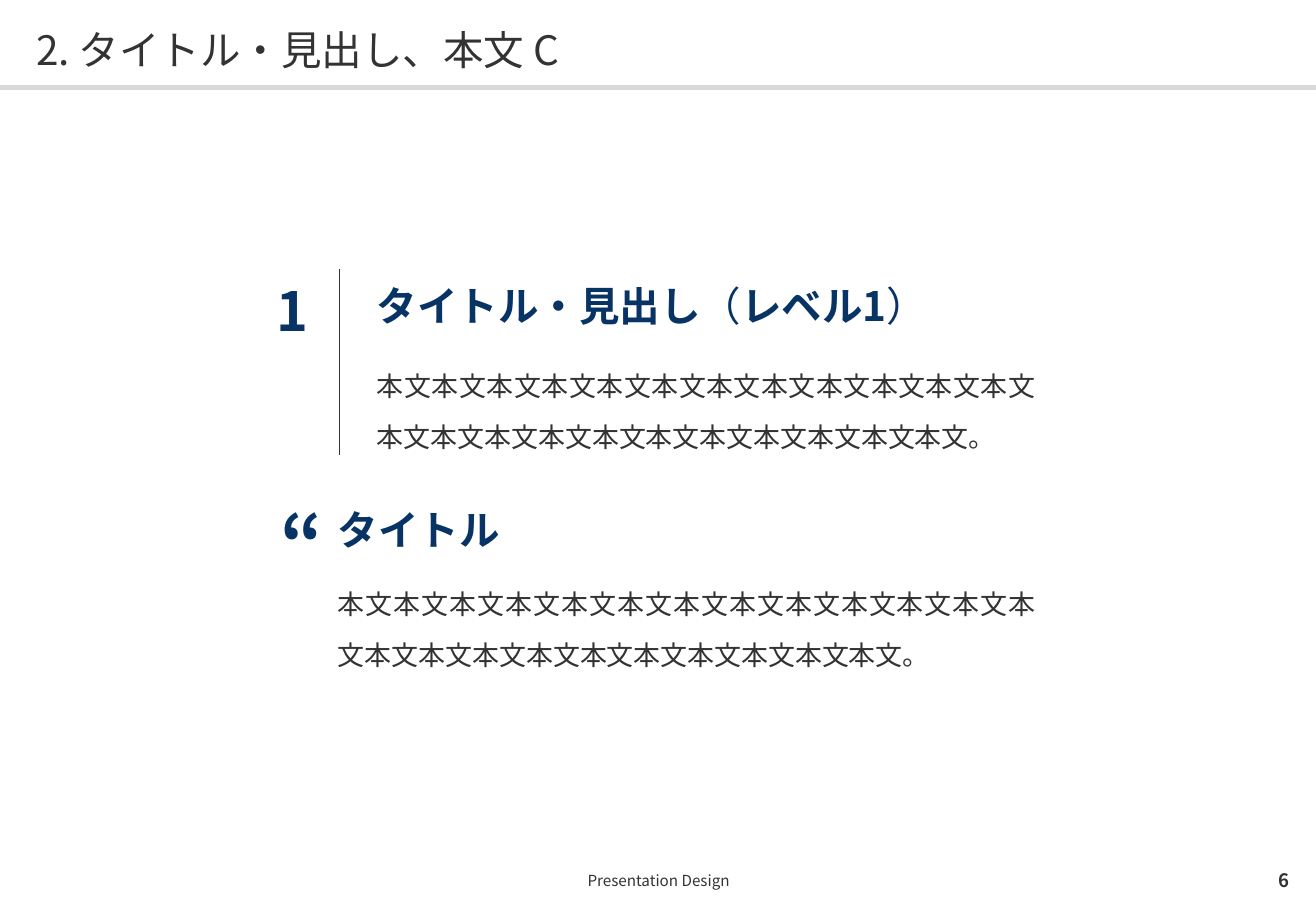
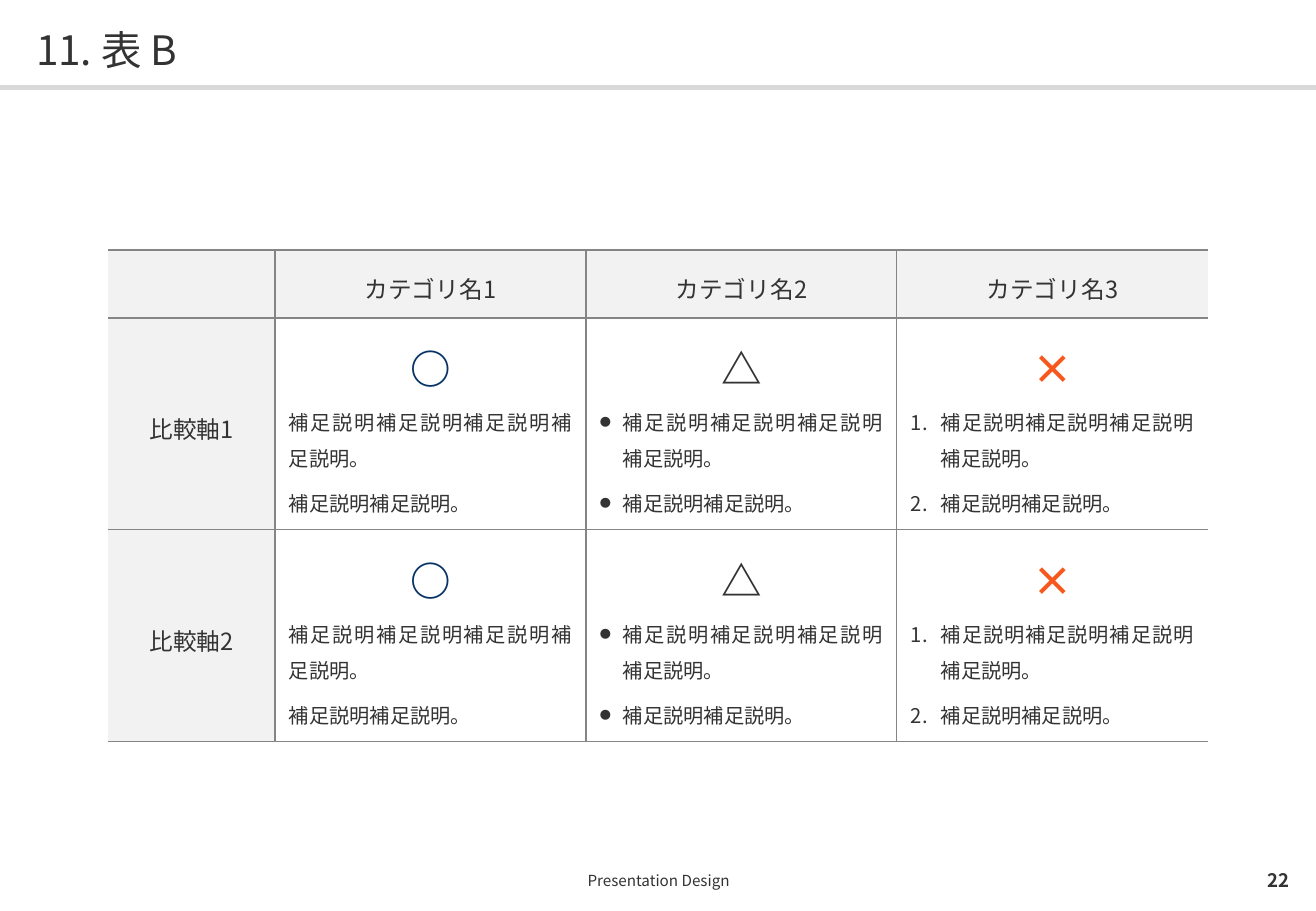
from dataclasses import dataclass

from lxml import etree
from pptx import Presentation
from pptx.dml.color import RGBColor
from pptx.enum.lang import MSO_LANGUAGE_ID
from pptx.enum.shapes import MSO_SHAPE
from pptx.enum.text import MSO_ANCHOR, MSO_AUTO_SIZE, PP_ALIGN
from pptx.oxml.ns import qn
from pptx.util import Emu, Pt

LEFT, CENTER, RIGHT = PP_ALIGN.LEFT, PP_ALIGN.CENTER, PP_ALIGN.RIGHT
JUSTIFY = PP_ALIGN.JUSTIFY
TOP, MIDDLE = MSO_ANCHOR.TOP, MSO_ANCHOR.MIDDLE
NO_FIT = MSO_AUTO_SIZE.NONE
RECTANGLE = MSO_SHAPE.RECTANGLE
JAPANESE = MSO_LANGUAGE_ID.JAPANESE
EMU_PER_PX = 7526
SLIDE_SIZE = (1316, 911)
TITLE_ONLY = 5
PLAIN_TABLE = "{2D5ABB26-0587-4C30-8999-92F81FD0307C}"


@dataclass(frozen=True)
class Theme:
    """Colours, font and type sizes of the deck."""

    font: str = "Noto Sans CJK JP"
    ink: str = "333333"
    navy: str = "073365"
    orange: str = "F7581D"
    band: str = "D9D9D9"
    grid: str = "858585"
    header: str = "F2F2F2"
    quote: int = 44
    numeral: int = 32
    title: int = 24
    body: int = 16
    label: int = 14
    note: int = 12
    page_number: int = 11
    footer: int = 9


THEME = Theme()


def px(length):
    """Turn a length in px into EMU."""
    return Emu(length * EMU_PER_PX)


def add_xml(parent, tag, **attributes):
    """Append a DrawingML element and return it."""
    return etree.SubElement(parent, qn(tag), attributes)


def write(frame, text, *, size, color=THEME.ink, bold=False, align=LEFT,
          line=None, before=0, after=0, bullet=None, join=False):
    """Write text as a new paragraph, or join it to the last one."""
    para = frame.paragraphs[-1]
    if not join:
        if para.runs:
            para = frame.add_paragraph()
        para.alignment = align
        para.space_before, para.space_after = Pt(before), Pt(after)
        if line:
            para.line_spacing = line
        if bullet:
            set_bullet(para, bullet)
    span = para.add_run()
    span.text = text
    font = span.font
    font.size, font.bold, font.name = Pt(size), bold, THEME.font
    font.color.rgb = RGBColor.from_string(color)
    font.language_id = JAPANESE
    add_xml(font.fill._xPr, "a:ea", typeface=THEME.font)


def set_bullet(para, bullet):
    """Give a paragraph a hanging dot or number."""
    indent = 23 if bullet == "●" else 30
    props = para._p.get_or_add_pPr()
    props.set("marL", str(px(indent)))
    props.set("indent", str(-px(indent)))
    if bullet == "●":
        add_xml(props, "a:buSzPct", val="55000")
        add_xml(props, "a:buFont", typeface=THEME.font)
        add_xml(props, "a:buChar", char=bullet)
    else:
        add_xml(props, "a:buFont", typeface=THEME.font)
        add_xml(props, "a:buAutoNum", type=bullet)


def place(shape, box):
    """Move a text shape to a box and clear its insets."""
    shape.left, shape.top, shape.width, shape.height = map(px, box)
    frame = shape.text_frame
    frame.margin_left = frame.margin_top = 0
    frame.margin_right = frame.margin_bottom = 0
    frame.word_wrap, frame.auto_size = True, NO_FIT
    frame.vertical_anchor = MIDDLE
    return frame


def add_label(page, box, text, **style):
    """Add a text box with one line."""
    write(place(page.shapes.add_textbox(0, 0, 0, 0), box), text, **style)


def prepare_layout(page):
    """Put the title band on the layout and drop its unused placeholders."""
    layout = page.slide_layout
    for holder in list(layout.placeholders)[1:]:
        layout.shapes.element.remove(holder.element)
    band = page.shapes.add_shape(
        RECTANGLE, *map(px, (0, 85, SLIDE_SIZE[0], 5)))
    band.shadow.inherit = False
    band.fill.solid()
    band.fill.fore_color.rgb = RGBColor.from_string(THEME.band)
    band.line.fill.background()
    layout.shapes.element.append(band.element)


def add_page(deck, title, number):
    """Add a page with its title, footer and number."""
    page = deck.slides.add_slide(deck.slide_layouts[TITLE_ONLY])
    if len(deck.slides) == 1:
        prepare_layout(page)
    write(place(page.shapes.title, (36, 21, 1244, 52)), title,
          size=THEME.title, line=1.1)
    add_label(page, (108, 863, 1101, 35), "Presentation Design",
              size=THEME.footer, align=CENTER)
    add_label(page, (1227, 863, 63, 34), str(number),
              size=THEME.page_number, bold=True, align=RIGHT)
    return page


def add_grid(page, left, top, columns, rows):
    """Add an unstyled table with the given column widths and row heights."""
    frame = page.shapes.add_table(
        len(rows), len(columns),
        *map(px, (left, top, sum(columns), sum(rows))))
    table = frame.table
    table.first_row = table.horz_banding = False
    frame.element.find(".//" + qn("a:tableStyleId")).text = PLAIN_TABLE
    for column, width in zip(table.columns, columns):
        column.width = px(width)
    for row, height in zip(table.rows, rows):
        row.height = px(height)
    return table


def format_cell(cell, insets=(0, 0, 0, 0), anchor=TOP, fill=None,
                sides="", color=THEME.ink, weight=0.5):
    """Set a cell's insets, fill and borders, and return its text frame."""
    (cell.margin_left, cell.margin_top,
     cell.margin_right, cell.margin_bottom) = map(px, insets)
    cell.vertical_anchor = anchor
    if fill:
        cell.fill.solid()
        cell.fill.fore_color.rgb = RGBColor.from_string(fill)
    else:
        cell.fill.background()
    props = cell._tc.get_or_add_tcPr()
    for index, side in enumerate(sides):
        border = etree.Element(qn("a:ln" + side), w=str(Pt(weight)))
        paint = add_xml(border, "a:solidFill")
        add_xml(paint, "a:srgbClr", val=color)
        props.insert(index, border)
    return cell.text_frame


def add_numbered_heading(page, left, top, body):
    """Add a numeral, a vertical rule, a heading and its body text."""
    table = add_grid(page, left, top, (74, 697), (186,))
    numeral = format_cell(table.cell(0, 0), (0, 0, 19, 0), sides="R")
    write(numeral, "1", size=THEME.numeral, color=THEME.navy, bold=True,
          align=CENTER)
    frame = format_cell(table.cell(0, 1), (38, 0, 0, 0), MIDDLE, sides="L")
    heading = {"size": THEME.title, "color": THEME.navy}
    write(frame, "タイトル・見出し", bold=True, line=1.1, before=24, after=12,
          **heading)
    for text, bold in (("（", False), ("レベル1", True), ("）", False)):
        write(frame, text, bold=bold, join=True, **heading)
    write(frame, body, size=THEME.body, align=JUSTIFY, line=1.3, after=12)


def add_quoted_heading(page, left, top, body):
    """Add a quotation mark beside a heading and its body text."""
    table = add_grid(page, left, top, (38, 718), (79, 102))
    table.cell(0, 0).merge(table.cell(1, 0))
    heading = {"color": THEME.navy, "bold": True}
    write(format_cell(table.cell(0, 0)), "“", size=THEME.quote, align=RIGHT,
          line=0.9, **heading)
    write(format_cell(table.cell(0, 1), (19, 0, 0, 14)), "タイトル",
          size=THEME.title, align=JUSTIFY, line=1.1, **heading)
    write(format_cell(table.cell(1, 1), (19, 0, 0, 0)), body,
          size=THEME.body, align=JUSTIFY, line=1.3, after=12)


def add_comparison(page, left, top):
    """Add a table that rates three categories on two axes."""
    ratings = (("○", THEME.navy, None), ("△", THEME.ink, "●"),
               ("×", THEME.orange, "arabicPeriod"))
    notes = ("補足説明" * 4 + "。", "補足説明" * 2 + "。")
    table = add_grid(page, left, top, (167, 311, 311, 311), (68, 212, 212))
    last = len(ratings)
    for row in range(len(table.rows)):
        for column in range(last + 1):
            is_label = row == 0 or column == 0
            sides = "L" * (column > 0) + "R" * (column < last) + "TB"
            frame = format_cell(
                table.cell(row, column), (14, 14, 14, 12),
                MIDDLE if row and not column else TOP,
                THEME.header if is_label else None,
                sides, THEME.grid, 0.75)
            if is_label:
                if row or column:
                    text = f"比較軸{row}" if row else f"カテゴリ名{column}"
                    write(frame, text, size=THEME.label, align=CENTER,
                          line=1.2)
                continue
            mark, color, bullet = ratings[column - 1]
            write(frame, mark, size=THEME.title, color=color, bold=True,
                  align=CENTER, line=1.1, after=3)
            for note in notes:
                write(frame, note, size=THEME.note, align=JUSTIFY, line=1.2,
                      after=6, bullet=bullet)


def main():
    """Build and save the deck."""
    deck = Presentation()
    deck.slide_width, deck.slide_height = map(px, SLIDE_SIZE)
    body = "本文" * 23 + "。"
    headings = add_page(deck, "2. タイトル・見出し、本文 C", 6)
    add_numbered_heading(headings, 265, 269, body)
    add_quoted_heading(headings, 281, 493, body)
    add_comparison(add_page(deck, "11. 表 B", 22), 108, 250)
    deck.save("out.pptx")


if __name__ == "__main__":
    main()
